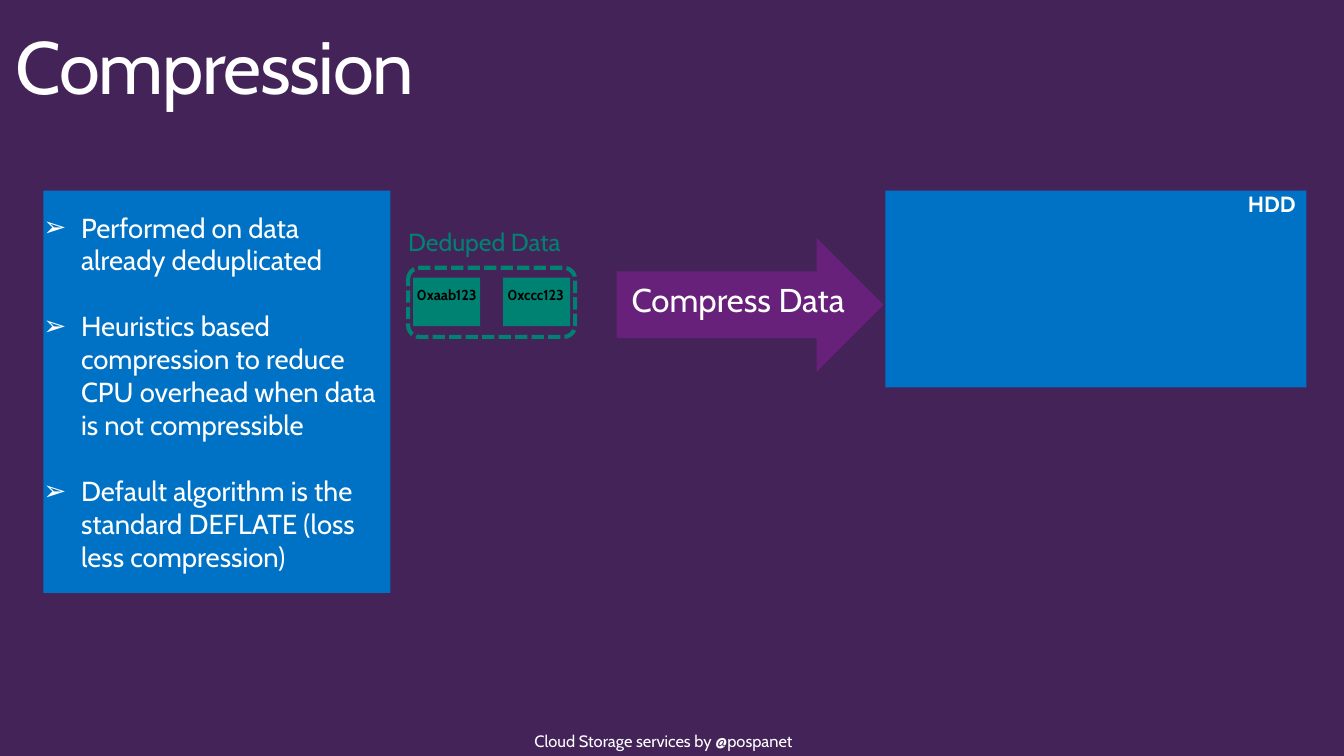
import pptx
import pptx.util
import pptx.dml.color
import pptx.enum.dml
import pptx.enum.shapes
import pptx.enum.text
import pptx.oxml.ns
import lxml.etree

Inches = pptx.util.Inches
Pt = pptx.util.Pt
Shapes = pptx.enum.shapes.MSO_SHAPE
Align = pptx.enum.text.PP_ALIGN
Anchor = pptx.enum.text.MSO_ANCHOR

WHITE = "FFFFFF"
BLUE = "0072C6"
GREEN = "008272"
PURPLE = "68217A"


def paint(color_format, color):
    color_format.rgb = pptx.dml.color.RGBColor.from_string(color)


def add_run(paragraph, text, size, color, bold=False):
    run = paragraph.add_run()
    run.text = text
    run.font.name = "Cabin"
    run.font.size = Pt(size)
    run.font.bold = bold
    paint(run.font.color, color)
    return run


presentation = pptx.Presentation()
presentation.slide_width = Inches(13.6)
presentation.slide_height = Inches(7.65)
slide = presentation.slides.add_slide(presentation.slide_layouts[1])
slide.background.fill.solid()
paint(slide.background.fill.fore_color, "442359")

# Title
title = slide.shapes.title
title.left, title.top = Inches(0), Inches(0.21)
title.width, title.height = Inches(13.6), Inches(0.72)
frame = title.text_frame
frame.auto_size = pptx.enum.text.MSO_AUTO_SIZE.NONE
frame.vertical_anchor = Anchor.TOP
frame.margin_left = frame.margin_right = Inches(0.16)
frame.margin_top = frame.margin_bottom = Inches(0.1)
paragraph = frame.paragraphs[0]
paragraph.alignment = Align.LEFT
paragraph.line_spacing = 0.9
run = add_run(paragraph, "Compression", 54, WHITE)
run.font._element.set("spc", "-100") if hasattr(run.font, "_element") else run._r.get_or_add_rPr().set("spc", "-100")

# Bullet panel
panel = slide.placeholders[1]
panel.left, panel.top = Inches(0.44), Inches(1.93)
panel.width, panel.height = Inches(3.51), Inches(4.07)
panel.fill.solid()
paint(panel.fill.fore_color, BLUE)
frame = panel.text_frame
frame.auto_size = pptx.enum.text.MSO_AUTO_SIZE.NONE
frame.vertical_anchor = Anchor.MIDDLE
frame.margin_left = frame.margin_top = frame.margin_bottom = 0
frame.margin_right = Inches(0.1)
points = [
    "Performed on data already deduplicated",
    "Heuristics based compression to reduce CPU overhead when data is not compressible",
    "Default algorithm is the standard DEFLATE (loss less compression)",
]
for index, point in enumerate(points):
    paragraph = frame.paragraphs[0] if index == 0 else frame.add_paragraph()
    properties = paragraph._p.get_or_add_pPr()
    properties.set("marL", str(Inches(0.38)))
    properties.set("indent", str(-Inches(0.38)))
    bullet = lxml.etree.SubElement(properties, pptx.oxml.ns.qn("a:buChar"))
    bullet.set("char", "➢")
    paragraph.space_before = Pt(24 if index else 0)
    add_run(paragraph, point, 20, WHITE)

# Blocks: preset, left, top, width, height, fill
blocks = [
    (Shapes.RECTANGLE, 8.96, 1.93, 4.26, 1.99, BLUE),
    (Shapes.RECTANGLE, 4.18, 2.81, 0.68, 0.49, GREEN),
    (Shapes.RECTANGLE, 5.09, 2.81, 0.68, 0.49, GREEN),
    (Shapes.RIGHT_ARROW, 6.24, 2.41, 2.7, 1.35, PURPLE),
    (Shapes.ROUNDED_RECTANGLE, 4.13, 2.71, 1.69, 0.7, None),
]
for preset, left, top, width, height, fill in blocks:
    shape = slide.shapes.add_shape(
        preset, Inches(left), Inches(top), Inches(width), Inches(height))
    shape.shadow.inherit = False
    if fill:
        shape.fill.solid()
        paint(shape.fill.fore_color, fill)
        shape.line.fill.background()
    else:
        shape.fill.background()
        paint(shape.line.color, GREEN)
        shape.line.width = Pt(3)
        shape.line.dash_style = pptx.enum.dml.MSO_LINE.SQUARE_DOT

# Labels: text, left, top, width, height, alignment, size, color, bold
labels = [
    ("HDD", 12.37, 1.84, 0.94, 0.57, Align.RIGHT, 16, WHITE, True),
    ("0xaab123", 3.96, 2.84, 1.12, 0.48, Align.CENTER, 10.5, "000000", True),
    ("0xccc123", 4.87, 2.84, 1.1, 0.48, Align.CENTER, 10.5, "000000", True),
    ("Compress Data", 5.87, 2.71, 3.2, 0.7, Align.CENTER, 24, WHITE, False),
    ("Deduped Data", 3.93, 2.19, 2.08, 0.6, Align.LEFT, 18, GREEN, False),
]
for text, left, top, width, height, alignment, size, color, bold in labels:
    label = slide.shapes.add_textbox(
        Inches(left), Inches(top), Inches(width), Inches(height))
    frame = label.text_frame
    frame.word_wrap = True
    frame.margin_left = frame.margin_right = Inches(0.2)
    frame.margin_top = frame.margin_bottom = Inches(0.16)
    paragraph = frame.paragraphs[0]
    paragraph.alignment = alignment
    paragraph.line_spacing = 0.9
    paragraph.space_after = Pt(6)
    add_run(paragraph, text, size, color, bold)

# Footer
footer = slide.shapes.add_textbox(Inches(5.31), Inches(7.35), Inches(2.99), Inches(0.3))
footer.text_frame.word_wrap = True
add_run(footer.text_frame.paragraphs[0], "Cloud Storage services by @pospanet", 12, WHITE)

presentation.save("out.pptx")
